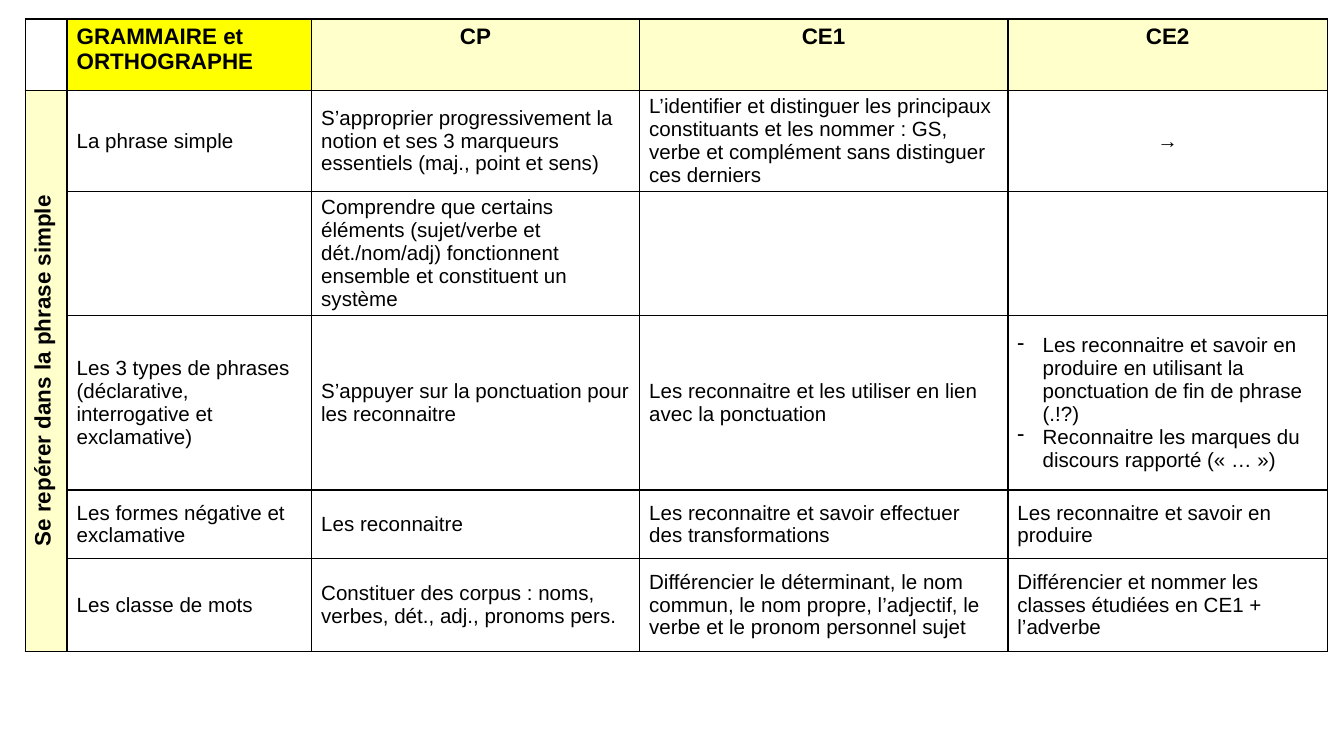
"""Builds the grammar and spelling progression table from CP to CE2."""
from lxml.etree import SubElement
from pptx import Presentation
from pptx.dml.color import RGBColor
from pptx.enum.text import MSO_ANCHOR, PP_ALIGN
from pptx.oxml import parse_xml
from pptx.oxml.ns import nsdecls, qn
from pptx.util import Pt

COLORS = {"ink": "000000", "subject": "FFFF00", "heading": "FFFFCC", "body": "FFFFFF"}
COLUMN_WIDTHS = [22.3, 131, 175.7, 197.3, 171.4]
ROW_HEIGHTS = [38.2, 49.7, 64.1, 93.6, 36.7, 49.7]
LEVELS = ["CP", "CE1", "CE2"]
DOMAIN = "Se repérer dans la phrase simple"
SKILLS = [
    ["La phrase simple",
     "S’approprier progressivement la notion et ses 3 marqueurs essentiels (maj., point et sens)",
     "L’identifier et distinguer les principaux constituants et les nommer : GS, verbe et "
     "complément sans distinguer ces derniers",
     "→"],
    ["",
     "Comprendre que certains éléments (sujet/verbe et dét./nom/adj) fonctionnent ensemble "
     "et constituent un système",
     "", ""],
    ["Les 3 types de phrases (déclarative, interrogative et exclamative)",
     "S’appuyer sur la ponctuation pour les reconnaitre",
     "Les reconnaitre et les utiliser en lien avec la ponctuation",
     ["Les reconnaitre et savoir en produire en utilisant la ponctuation de fin de phrase (.!?)",
      "Reconnaitre les marques du discours rapporté (« … »)"]],
    ["Les formes négative et exclamative",
     "Les reconnaitre",
     "Les reconnaitre et savoir effectuer des transformations",
     "Les reconnaitre et savoir en produire"],
    ["Les classe de mots",
     "Constituer des corpus : noms, verbes, dét., adj., pronoms pers.",
     "Différencier le déterminant, le nom commun, le nom propre, l’adjectif, le verbe et le "
     "pronom personnel sujet",
     "Différencier et nommer les classes étudiées en CE1 + l’adverbe"],
]


class ProgressionSlide:
    """Holds the style and the slide being filled."""

    def __init__(self, slide, font="Arial"):
        self.slide = slide
        self.font = font

    def table(self, left, top, widths, heights):
        """Adds an unstyled, fully bordered table."""
        frame = self.slide.shapes.add_table(
            len(heights), len(widths), Pt(left), Pt(top), Pt(sum(widths)), Pt(sum(heights)))
        grid = frame.table
        grid.first_row = grid.horz_banding = False
        for column, width in zip(grid.columns, widths):
            column.width = Pt(width)
        for row, height in zip(grid.rows, heights):
            row.height = Pt(height)
        for cell in grid.iter_cells():
            cell.fill.background()
            self.borders(cell)
        return grid

    def borders(self, cell):
        """Draws the four sides of a cell."""
        properties = cell._tc.get_or_add_tcPr()
        for position, side in enumerate(("lnL", "lnR", "lnT", "lnB")):
            properties.insert(position, parse_xml(
                f'<a:{side} {nsdecls("a")} w="{Pt(1)}"><a:solidFill>'
                f'<a:srgbClr val="{COLORS["ink"]}"/></a:solidFill></a:{side}>'))

    def cell(self, cell, text="", fill=None, size=11, bold=False, centered=False,
             anchor=MSO_ANCHOR.MIDDLE):
        """Fills a cell with a text, or with a dashed list."""
        cell.margin_left = cell.margin_right = Pt(5.2)
        cell.margin_top = cell.margin_bottom = Pt(2.6)
        cell.vertical_anchor = anchor
        if fill:
            cell.fill.solid()
            cell.fill.fore_color.rgb = RGBColor.from_string(COLORS[fill])
        dashed = isinstance(text, list)
        for index, line in enumerate(text if dashed else [text]):
            frame = cell.text_frame
            paragraph = frame.add_paragraph() if index else frame.paragraphs[0]
            paragraph.alignment = PP_ALIGN.CENTER if centered else PP_ALIGN.LEFT
            if dashed:
                self.dash(paragraph)
            if line:
                run = paragraph.add_run()
                run.text = line
                run.font.name = self.font
                run.font.size = Pt(size)
                run.font.bold = bold
                run.font.color.rgb = RGBColor.from_string(COLORS["ink"])

    def dash(self, paragraph):
        """Gives a paragraph a hanging dash."""
        properties = paragraph._p.get_or_add_pPr()
        properties.set("marL", str(Pt(13.5)))
        properties.set("indent", str(Pt(-13.5)))
        SubElement(properties, qn("a:buChar")).set("char", "-")


def main():
    """Builds and saves the slide."""
    deck = Presentation()
    deck.slide_width, deck.slide_height = Pt(720), Pt(405)
    page = ProgressionSlide(deck.slides.add_slide(deck.slide_layouts[6]))
    grid = page.table(13.6, 10.2, COLUMN_WIDTHS, ROW_HEIGHTS)

    heading = {"size": 12, "bold": True, "anchor": MSO_ANCHOR.TOP}
    page.cell(grid.cell(0, 1), "GRAMMAIRE et ORTHOGRAPHE", "subject", **heading)
    for column, level in enumerate(LEVELS, 2):
        page.cell(grid.cell(0, column), level, "heading", centered=True, **heading)

    domain = grid.cell(1, 0)
    domain.merge(grid.cell(len(SKILLS), 0))
    page.cell(domain, DOMAIN, "heading", size=12, bold=True, centered=True)
    domain._tc.get_or_add_tcPr().set("vert", "vert270")

    for row, skills in enumerate(SKILLS, 1):
        for column, skill in enumerate(skills, 1):
            page.cell(grid.cell(row, column), skill, "body" if column > 1 else None,
                      centered=skill == "→")
    deck.save("out.pptx")


if __name__ == "__main__":
    main()
